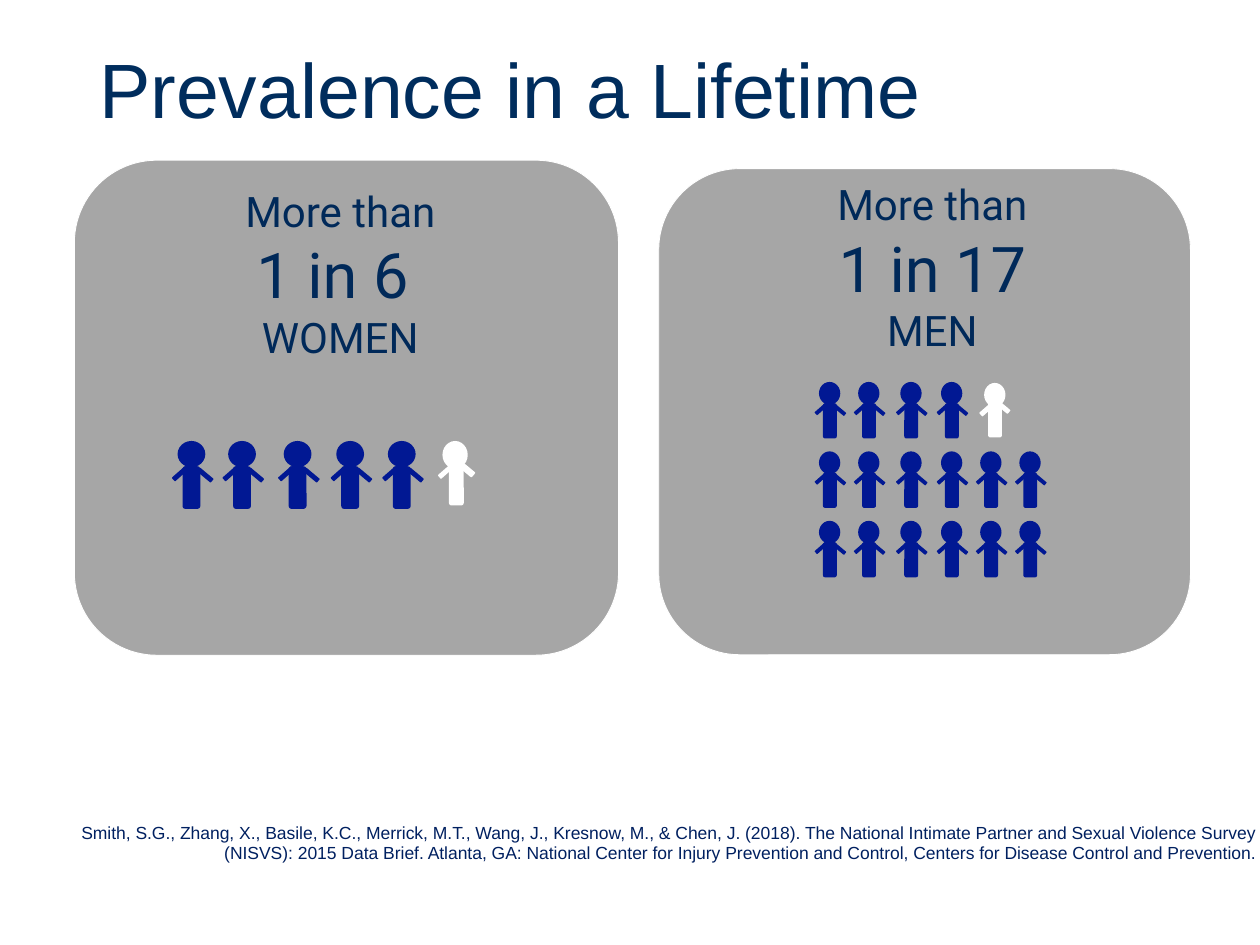
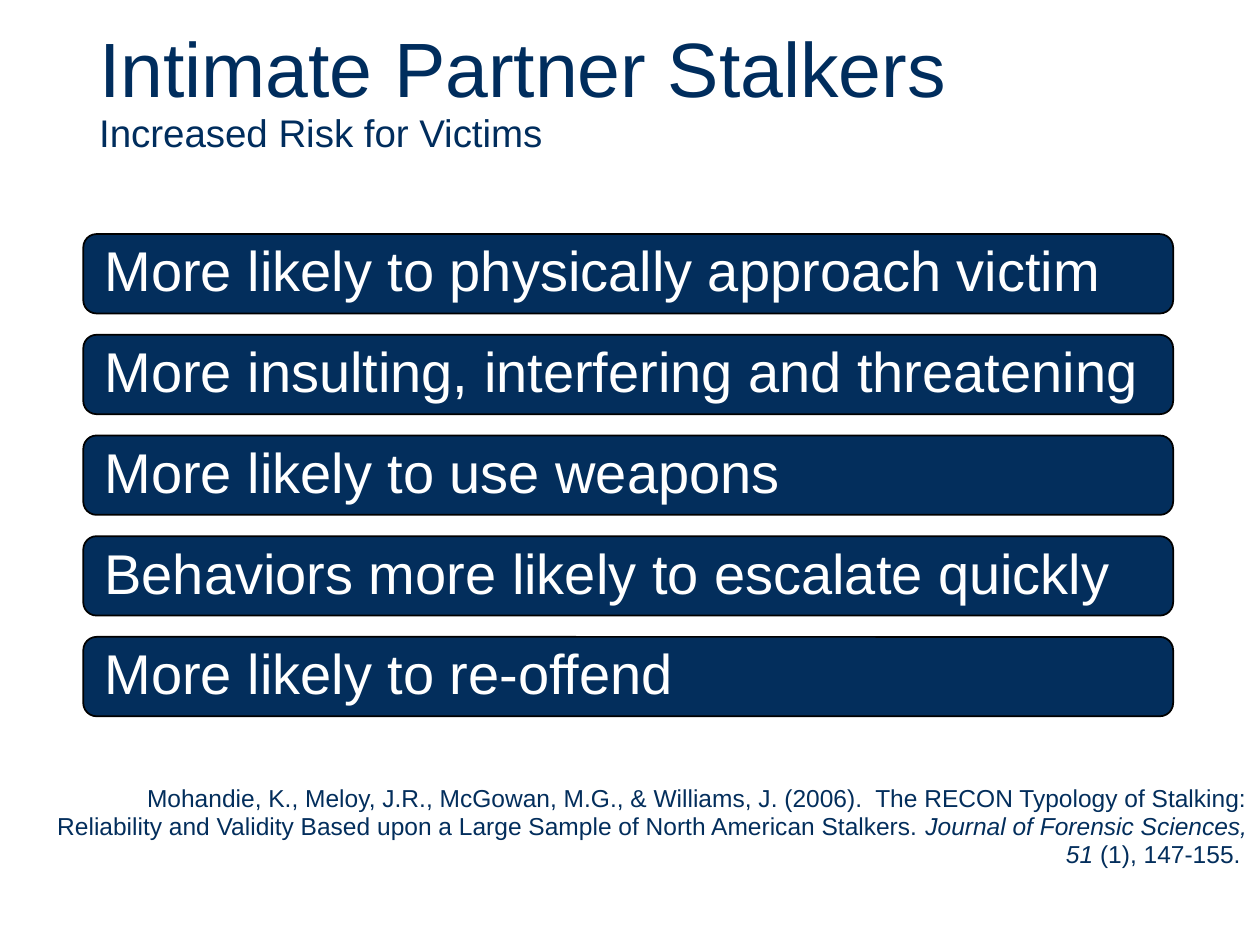
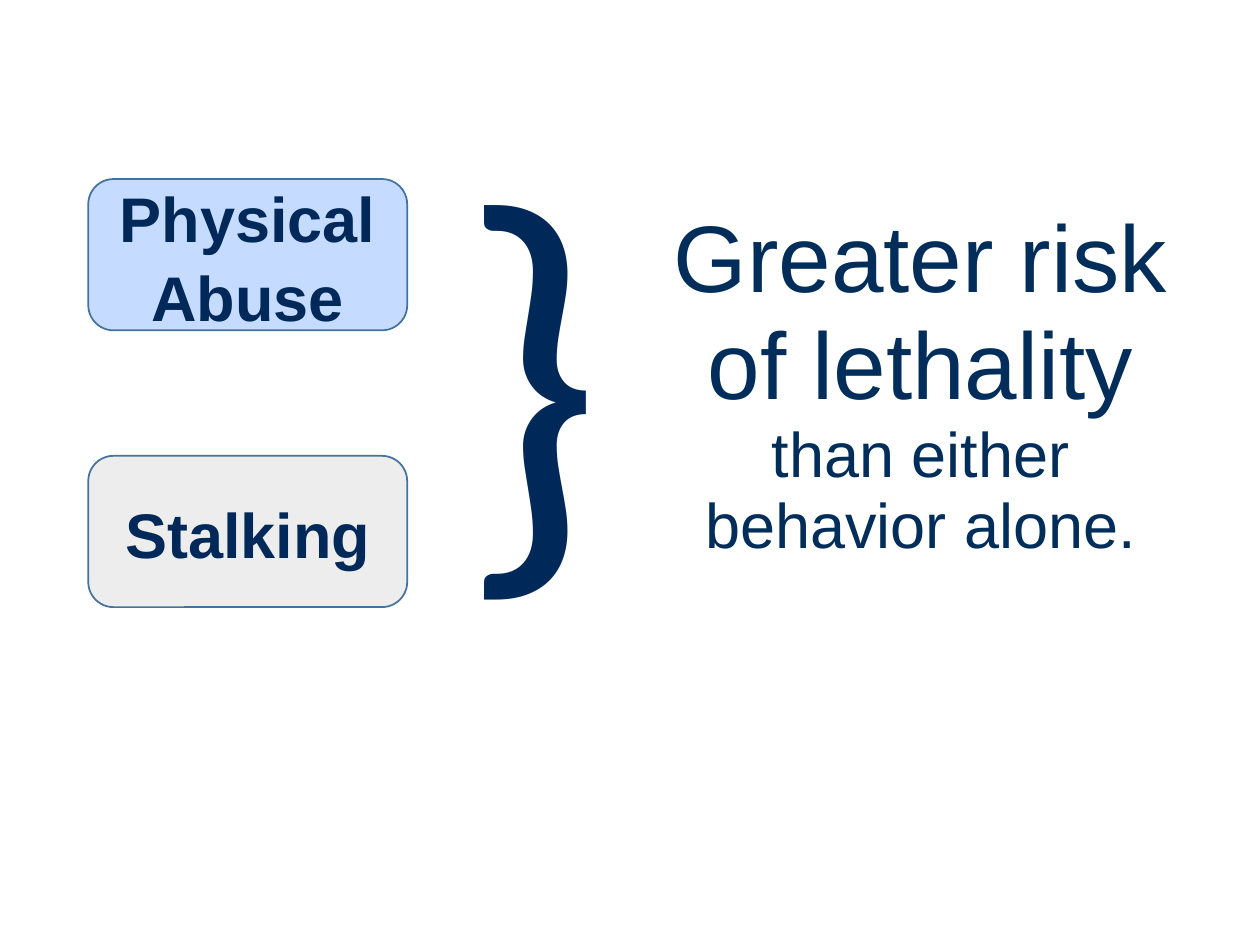
import pptx
import pptx.dml.color
import pptx.enum.shapes
import pptx.enum.text
import pptx.util

Cm = pptx.util.Cm
ALIGN = pptx.enum.text.PP_ALIGN
ANCHOR = pptx.enum.text.MSO_ANCHOR
SHAPE = pptx.enum.shapes.MSO_SHAPE

NAVY = "002959"
TITLE_NAVY = "002D5D"
BAR_NAVY = "032E5C"
CITATION_NAVY = "002060"
PERSON_BLUE = "011893"
PANEL_GREY = "A6A6A6"
BOX_LINE = "43739E"
WHITE = "FFFFFF"
BLACK = "000000"

TITLE_BOX = (1.75, 0.05, 21.9, 3.68)
ARM_ANGLES = (-41.4, 39.7)

PANELS = [
    {"box": (13.28, 3.4, 10.72, 9.8), "text_box": (15.11, 3.48, 7.37, 3.84),
     "odds": "1 in 17", "group": "MEN"},
    {"box": (1.5, 3.23, 10.97, 9.98), "text_box": (1.78, 3.61, 10.16, 3.84),
     "odds": "1 in 6 ", "group": "WOMEN"},
]

MAN = {"head": (0, 0, 0.43, 0.46), "body": (0.08, 0.43, 0.28, 0.71),
       "arms": [(-0.1, 0.51, 0.28, 0.08), (0.28, 0.53, 0.28, 0.08)]}
WHITE_MAN = {"head": (0, 0, 0.43, 0.48), "body": (0.08, 0.36, 0.28, 0.74),
             "arms": [(-0.1, 0.51, 0.25, 0.1), (0.28, 0.46, 0.25, 0.1)]}
WOMAN = {"head": (0, 0, 0.56, 0.53), "body": (0.1, 0.51, 0.36, 0.86),
         "arms": [(-0.13, 0.61, 0.36, 0.1), (0.38, 0.64, 0.36, 0.1)]}
WHITE_WOMAN = {"head": (0, 0, 0.51, 0.56), "body": (0.13, 0.41, 0.3, 0.89),
               "arms": [(-0.1, 0.58, 0.3, 0.1), (0.36, 0.53, 0.3, 0.13)]}

MEN_COLUMNS = [16.51, 17.3, 18.15, 18.97, 19.76, 20.55]
MEN_PER_ROW = [4, 6, 6]
MEN_TOP, MEN_ROW_STEP = 7.7, 1.4
WOMEN_COLUMNS = [3.58, 4.6, 5.72, 6.78, 7.82]
WOMEN_TOP = 8.89

PREVALENCE_SOURCE = [
    ("Smith, S.G., Zhang, X., Basile, K.C., Merrick, M.T., Wang, J., Kresnow, M., & Chen, J. (2018). "
     "The National Intimate Partner and Sexual Violence Survey (NISVS): 2015 Data Brief. Atlanta, GA: "
     "National Center for Injury Prevention and Control, Centers for Disease Control and Prevention.", 10),
]
STALKER_SOURCE = [
    ("Mohandie, K., Meloy, J.R., McGowan, M.G., & Williams, J. (2006).  The RECON Typology of Stalking: "
     "Reliability and Validity Based upon a Large Sample of North American Stalkers. ", 14),
    ("Journal of Forensic Sciences, 51", 14, True),
    (" (1), 147-155. ", 14),
]

STALKER_RISKS = [
    "More likely to physically approach victim",
    "More insulting, interfering and threatening",
    "More likely to use weapons",
    "Behaviors more likely to escalate quickly",
    "More likely to re-offend",
]
BAR_LEFT, BAR_TOP, BAR_WIDTH, BAR_HEIGHT, BAR_STEP = 1.68, 4.72, 21.97, 1.6, 2.03

BEHAVIORS = [("Physical Abuse", "C5DBFF", 3.61), ("Stalking", "EDEDED", 9.19)]
LETHALITY = [("Greater risk of lethality ", 54), ("than either behavior alone.", 36)]


def rgb(color):
    return pptx.dml.color.RGBColor.from_string(color)


def add_shape(slide, kind, box, fill, line=None, line_width=1, rotation=0):
    shape = slide.shapes.add_shape(kind, *map(Cm, box))
    shape.shadow.inherit = False
    shape.rotation = rotation
    shape.fill.solid()
    shape.fill.fore_color.rgb = rgb(fill)
    if line:
        shape.line.color.rgb = rgb(line)
        shape.line.width = pptx.util.Pt(line_width)
    else:
        shape.line.fill.background()
    return shape


def write(shape, paragraphs, color, font="Arial", align=ALIGN.LEFT, anchor=ANCHOR.TOP,
          spacing=1.0, bold=False, wrap=True):
    frame = shape.text_frame
    frame.word_wrap = wrap
    frame.vertical_anchor = anchor
    for index, pieces in enumerate(paragraphs):
        paragraph = frame.add_paragraph() if index else frame.paragraphs[0]
        paragraph.alignment = align
        paragraph.line_spacing = spacing
        for text, size, *italic in pieces:
            if text == "\v":
                paragraph.add_line_break()
                continue
            run = paragraph.add_run()
            run.text = text
            run.font.name = font
            run.font.size = pptx.util.Pt(size)
            run.font.bold = bold
            run.font.italic = bool(italic)
            run.font.color.rgb = rgb(color)


def add_text(slide, box, paragraphs, color, **style):
    text_box = slide.shapes.add_textbox(*map(Cm, box))
    write(text_box, paragraphs, color, **style)
    return text_box


def add_title(slide, pieces):
    add_text(slide, TITLE_BOX, [pieces], TITLE_NAVY, anchor=ANCHOR.MIDDLE, spacing=0.9)


def add_citation(slide, box, pieces, color):
    add_text(slide, box, [pieces], color, align=ALIGN.RIGHT, spacing=0.95)


def add_person(slide, figure, left, top, color):
    parts = [(SHAPE.ROUNDED_RECTANGLE, arm, angle) for arm, angle in zip(figure["arms"], ARM_ANGLES)]
    parts += [(SHAPE.ROUNDED_RECTANGLE, figure["body"], 0), (SHAPE.OVAL, figure["head"], 0)]
    for kind, (x, y, width, height), angle in parts:
        add_shape(slide, kind, (left + x, top + y, width, height), color, rotation=angle)


def build_prevalence(slide):
    for panel in PANELS:
        add_shape(slide, SHAPE.ROUNDED_RECTANGLE, panel["box"], PANEL_GREY, WHITE, 0.5)
        lines = [[("More than", 24), ("\v", 24), (panel["odds"], 36)], [(panel["group"], 24)]]
        add_text(slide, panel["text_box"], lines, NAVY, font="Roboto", align=ALIGN.CENTER)
    for row, count in enumerate(MEN_PER_ROW):
        for left in MEN_COLUMNS[:count]:
            add_person(slide, MAN, left, MEN_TOP + row * MEN_ROW_STEP, PERSON_BLUE)
    add_person(slide, WHITE_MAN, 19.84, 7.72, WHITE)
    for left in WOMEN_COLUMNS:
        add_person(slide, WOMAN, left, WOMEN_TOP, PERSON_BLUE)
    add_person(slide, WHITE_WOMAN, 8.92, WOMEN_TOP, WHITE)
    add_title(slide, [("Prevalence in a Lifetime", 44)])
    add_citation(slide, (0, 16.48, 25.55, 1.07), PREVALENCE_SOURCE, CITATION_NAVY)


def build_stalkers(slide):
    add_title(slide, [("Intimate Partner Stalkers  ", 44), ("\v", 44), ("Increased Risk for Victims", 22)])
    for index, risk in enumerate(STALKER_RISKS):
        box = (BAR_LEFT, BAR_TOP + index * BAR_STEP, BAR_WIDTH, BAR_HEIGHT)
        bar = add_shape(slide, SHAPE.ROUNDED_RECTANGLE, box, BAR_NAVY, BLACK)
        bar.text_frame.margin_left = bar.text_frame.margin_right = Cm(0.35)
        write(bar, [[(risk, 32)]], WHITE, anchor=ANCHOR.MIDDLE, spacing=0.9)
    add_citation(slide, (0.69, 15.7, 24.71, 1.4), STALKER_SOURCE, BAR_NAVY)


def build_lethality(slide):
    for behavior, fill, top in BEHAVIORS:
        box = add_shape(slide, SHAPE.ROUNDED_RECTANGLE, (1.78, top, 6.43, 3.05), fill, BOX_LINE)
        write(box, [[(behavior, 36)]], NAVY, align=ALIGN.CENTER, anchor=ANCHOR.MIDDLE,
              spacing=1.05, bold=True)
    add_text(slide, (8.99, 1.45, 3.45, 11.48), [[("}", 262.5)]], NAVY, font="Calibri", wrap=False)
    outcome = add_text(slide, (12.93, 4.06, 11, 10.39), [LETHALITY], "002D59",
                       align=ALIGN.CENTER, spacing=0.94)
    outcome.text_frame.margin_left = Cm(0.5)


def main():
    presentation = pptx.Presentation()
    presentation.slide_width = Cm(25.4)
    presentation.slide_height = Cm(19.05)
    for build in (build_prevalence, build_stalkers, build_lethality):
        build(presentation.slides.add_slide(presentation.slide_layouts[6]))
    presentation.save("out.pptx")


if __name__ == "__main__":
    main()
